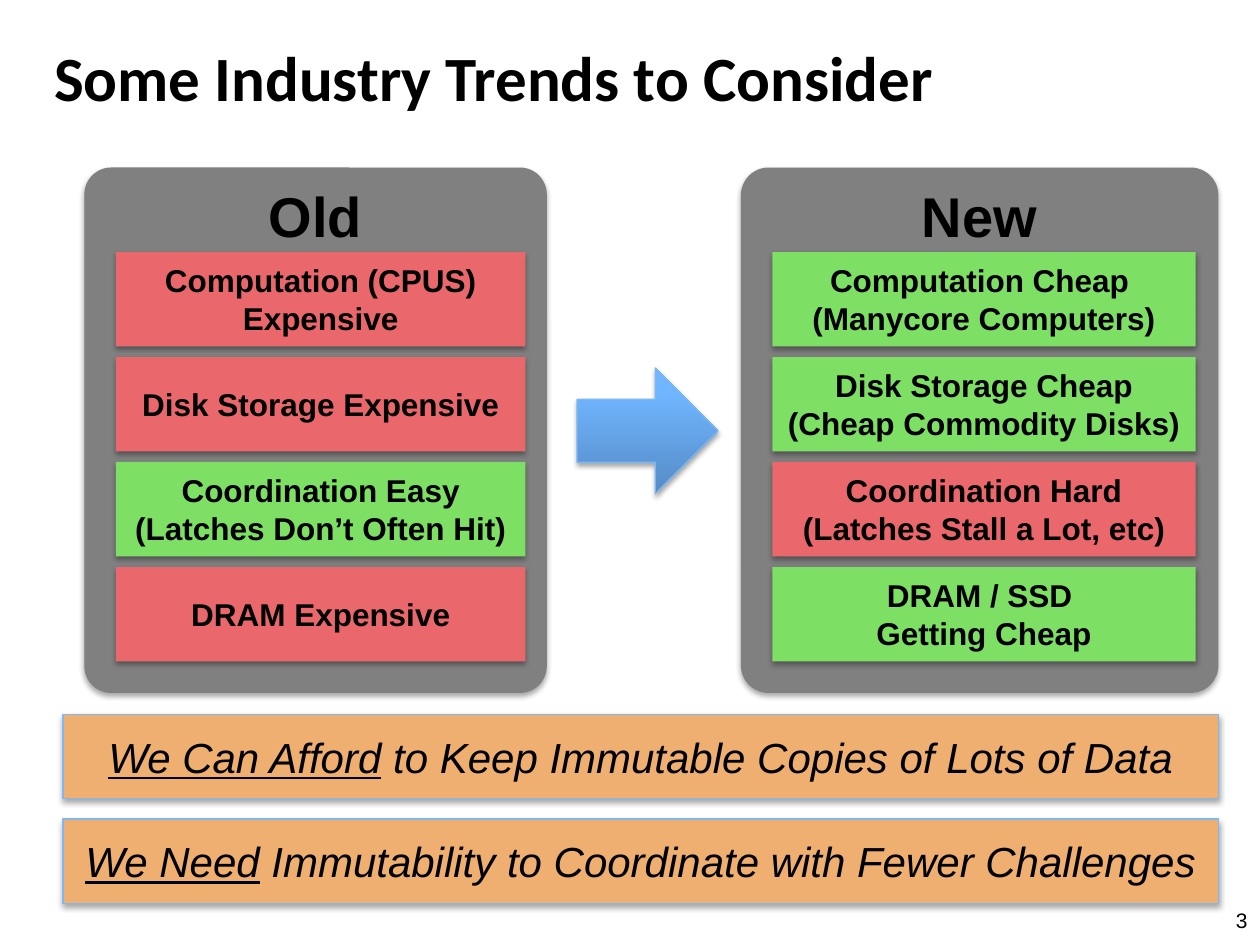
from dataclasses import dataclass

from lxml import etree
from pptx import Presentation
from pptx.dml.color import RGBColor
from pptx.enum.shapes import MSO_SHAPE
from pptx.enum.text import MSO_ANCHOR, MSO_AUTO_SIZE, PP_ALIGN
from pptx.oxml.ns import qn
from pptx.util import Inches, Pt

RECTANGLE = MSO_SHAPE.RECTANGLE
ROUNDED_RECTANGLE = MSO_SHAPE.ROUNDED_RECTANGLE
RIGHT_ARROW = MSO_SHAPE.RIGHT_ARROW
TOP, MIDDLE = MSO_ANCHOR.TOP, MSO_ANCHOR.MIDDLE
LEFT, CENTER, RIGHT = PP_ALIGN.LEFT, PP_ALIGN.CENTER, PP_ALIGN.RIGHT


@dataclass(frozen=True)
class Theme:
    title_font: str = "Calibri"
    body_font: str = "Arial"
    title_size: int = 36
    heading_size: int = 32
    takeaway_size: int = 24
    trend_size: int = 18
    number_size: int = 12
    text: str = "000000"
    panel: str = "808080"
    bad: str = "EA686C"
    good: str = "7DDF64"
    takeaway: str = "EFAF70"
    outline: str = "7DB7F4"
    arrow_dark: str = "558BC5"
    arrow_light: str = "6FB5FF"


def rgb(color):
    return RGBColor.from_string(color)


def add_shadow(shape):
    """Give the shape a soft shadow straight below it."""
    shape.shadow.inherit = False
    effects = shape._element.spPr.find(qn("a:effectLst"))
    shadow = etree.SubElement(
        effects, qn("a:outerShdw"), blurRad=str(Pt(3.1)), dist=str(Pt(1.8)),
        dir="5400000", rotWithShape="0")
    color = etree.SubElement(shadow, qn("a:srgbClr"), val="000000")
    etree.SubElement(color, qn("a:alpha"), val="35000")


class SlideBuilder:
    def __init__(self, slide, theme):
        self.slide = slide
        self.theme = theme

    def format_text(self, frame, size, alignment=CENTER, anchor=MIDDLE,
                    font_name=None, bold=False, italic=False):
        frame.word_wrap = True
        frame.vertical_anchor = anchor
        for paragraph in frame.paragraphs:
            paragraph.alignment = alignment
            for run in paragraph.runs:
                run.font.name = font_name or self.theme.body_font
                run.font.size = Pt(size)
                run.font.bold = bold
                run.font.italic = italic
                run.font.color.rgb = rgb(self.theme.text)

    def title(self, text):
        title = self.slide.shapes.title
        title.left, title.top = Inches(0.33), Inches(0.17)
        title.width, title.height = Inches(9), Inches(0.87)
        title.text_frame.text = text
        title.text_frame.auto_size = MSO_AUTO_SIZE.NONE
        self.format_text(title.text_frame, self.theme.title_size, LEFT,
                         font_name=self.theme.title_font, bold=True)

    def slide_number(self, text):
        box = self.slide.shapes.add_textbox(
            Inches(8.83), Inches(7.1), Inches(1.17), Inches(0.4))
        box.text_frame.text = text
        self.format_text(box.text_frame, self.theme.number_size, RIGHT)

    def block(self, shapes, kind, left, top, width, height, fill=None, line=None):
        shape = shapes.add_shape(
            kind, Inches(left), Inches(top), Inches(width), Inches(height))
        if fill:
            shape.fill.solid()
            shape.fill.fore_color.rgb = rgb(fill)
        if line:
            shape.line.color.rgb = rgb(line)
            shape.line.width = Pt(0.75)
        else:
            shape.line.fill.background()
        add_shadow(shape)
        return shape

    def panel(self, heading, left, width, trend_width, trends):
        """Draw a headed panel with its stack of trends; return the group."""
        group = self.slide.shapes.add_group_shape()
        panel = self.block(group.shapes, ROUNDED_RECTANGLE, left, 1.33, width, 4.17,
                           self.theme.panel)
        panel.adjustments[0] = 0.058
        panel.text_frame.text = heading
        self.format_text(panel.text_frame, self.theme.heading_size, anchor=TOP, bold=True)
        for row, (text, color) in enumerate(trends):
            trend = self.block(group.shapes, RECTANGLE, left + 0.25, 2 + row * 2.5 / 3,
                               trend_width, 0.75, color)
            trend.text_frame.text = text
            self.format_text(trend.text_frame, self.theme.trend_size, bold=True)
        return group

    def arrow(self, shapes):
        arrow = self.block(shapes, RIGHT_ARROW, 4.58, 2.92, 1.12, 1,
                           line=self.theme.outline)
        arrow.fill.gradient()
        arrow.fill.gradient_angle = 90
        dark, light = arrow.fill.gradient_stops
        dark.color.rgb, dark.position = rgb(self.theme.arrow_dark), 0
        light.color.rgb, light.position = rgb(self.theme.arrow_light), 0.8

    def takeaway(self, top, stressed, rest):
        banner = self.block(self.slide.shapes, RECTANGLE, 0.5, top, 9.17, 0.67,
                            self.theme.takeaway, self.theme.outline)
        paragraph = banner.text_frame.paragraphs[0]
        for text, underline in ((stressed, True), (rest, False)):
            run = paragraph.add_run()
            run.text = text
            run.font.underline = underline
        self.format_text(banner.text_frame, self.theme.takeaway_size, italic=True)


def main():
    presentation = Presentation()
    presentation.slide_width, presentation.slide_height = Inches(10), Inches(7.5)
    theme = Theme()
    slide = presentation.slides.add_slide(presentation.slide_layouts[5])
    builder = SlideBuilder(slide, theme)

    builder.title("Some Industry Trends to Consider")
    builder.slide_number("3")
    builder.panel("Old", 0.67, 3.67, 3.25, [
        ("Computation (CPUS) Expensive", theme.bad),
        ("Disk Storage Expensive", theme.bad),
        ("Coordination Easy\n(Latches Don’t Often Hit)", theme.good),
        ("DRAM Expensive", theme.bad),
    ])
    new_group = builder.panel("New", 5.88, 3.79, 3.36, [
        ("Computation Cheap \v(Manycore Computers)", theme.good),
        ("Disk Storage Cheap\n(Cheap Commodity Disks)", theme.good),
        ("Coordination Hard\n(Latches Stall a Lot, etc)", theme.bad),
        ("DRAM / SSD \vGetting Cheap", theme.good),
    ])
    builder.arrow(new_group.shapes)
    builder.takeaway(5.67, "We Can Afford", " to Keep Immutable Copies of Lots of Data")
    builder.takeaway(6.5, "We Need", " Immutability to Coordinate with Fewer Challenges")

    presentation.save("out.pptx")


if __name__ == "__main__":
    main()
